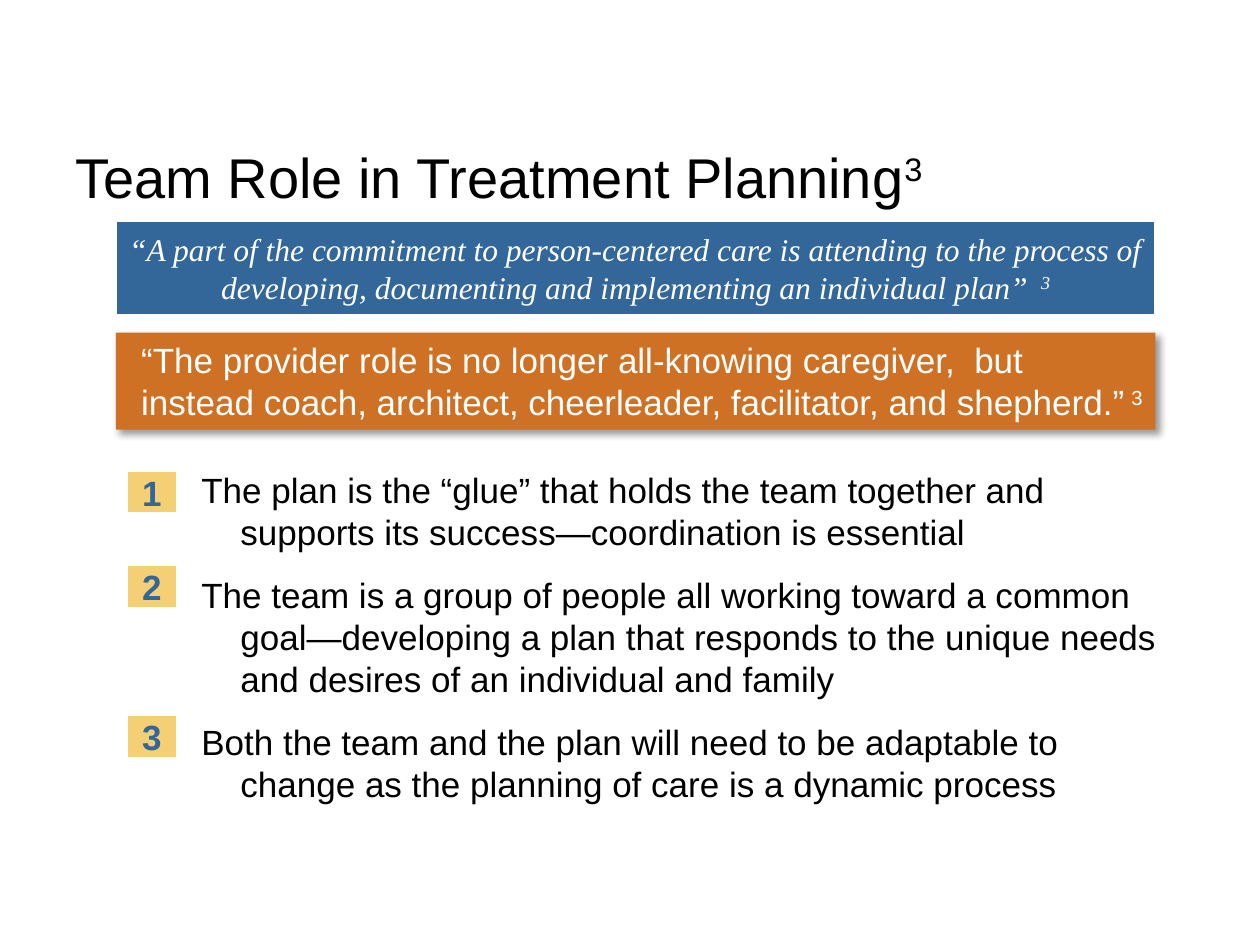
"""Build the slide on the team's role in treatment planning."""
from lxml import etree
from pptx import Presentation
from pptx.dml.color import RGBColor
from pptx.enum.shapes import MSO_SHAPE as Shape
from pptx.enum.text import MSO_ANCHOR as Anchor, MSO_AUTO_SIZE as AutoSize, PP_ALIGN as Align
from pptx.oxml import parse_xml
from pptx.oxml.ns import nsdecls, qn
from pptx.util import Inches, Pt


def rgb(value):
    return RGBColor.from_string(value)


def write(paragraph, text, size, color, face="Arial", note=""):
    paragraph.add_run().text = text
    if note:
        citation = paragraph.add_run()
        citation.text = note
        citation._r.get_or_add_rPr().set("baseline", "30000")
    font = paragraph.font
    font.size, font.name, font.color.rgb = Pt(size), face, rgb(color)
    return font


deck = Presentation()
deck.slide_width, deck.slide_height = Inches(10), Inches(7.5)
slide = deck.slides.add_slide(deck.slide_layouts[6])
shapes = slide.shapes
banner_left, banner_width = Inches(0.92), Inches(8.25)

title = shapes.add_textbox(Inches(0.5), Inches(1.08), Inches(8.75), Inches(0.92)).text_frame
title.word_wrap = True
write(title.paragraphs[0], "Team Role in Treatment Planning", 32, "000000", note="3")

commitment = shapes.add_shape(Shape.RECTANGLE, banner_left, Inches(1.75), banner_width, Inches(0.75))
commitment.shadow.inherit = False
commitment.fill.solid()
commitment.fill.fore_color.rgb = rgb("336699")
commitment.line.color.rgb = rgb("FFFFFF")
commitment.line.width = Pt(1.5)
commitment.text_frame.vertical_anchor = Anchor.MIDDLE
quote = commitment.text_frame.paragraphs[0]
quote.alignment = Align.CENTER
write(quote, "“A part of the commitment to person-centered care is attending to the process of "
      "developing, documenting and implementing an individual plan” ",
      18, "FFFFFF", "Times New Roman", " 3").italic = True

provider = shapes.add_shape(Shape.RECTANGLE, banner_left, Inches(2.64), banner_width, Inches(0.77))
provider.shadow.inherit = False
provider.fill.solid()
provider.fill.fore_color.rgb = rgb("CE7124")
provider.line.fill.background()
effects = provider._element.spPr.find(qn("a:effectLst"))
effects.append(parse_xml(
    f'<a:outerShdw {nsdecls("a")} blurRad="{Pt(4)}" dist="{Pt(3)}" dir="2700000" algn="tl" rotWithShape="0"/>'))
shade = etree.SubElement(effects[0], qn("a:srgbClr"), val="000000")
etree.SubElement(shade, qn("a:alpha"), val="40000")
role = provider.text_frame
role.auto_size = AutoSize.SHAPE_TO_FIT_TEXT
role.vertical_anchor = Anchor.TOP
role.margin_left = Inches(0.2)
role.paragraphs[0].alignment = Align.LEFT
write(role.paragraphs[0], "“The provider role is no longer all-knowing caregiver,  but instead coach, "
      "architect, cheerleader, facilitator, and shepherd.”", 20, "FFFFFF", note=" 3")

points = [
    (3.73, "The plan is the “glue” that holds the team together and supports its success—coordination is essential"),
    (4.48, "The team is a group of people all working toward a common goal—developing a plan that responds "
           "to the unique needs and desires of an individual and family"),
    (5.67, "Both the team and the plan will need to be adaptable to change as the planning of care is a dynamic process"),
]
body = shapes.add_textbox(Inches(1), Inches(3.67), Inches(8.33), Inches(2.75)).text_frame
body.word_wrap = True
for number, (top, point) in enumerate(points, 1):
    paragraph = body.paragraphs[0] if number == 1 else body.add_paragraph()
    indents = paragraph._p.get_or_add_pPr()
    indents.set("marL", str(Inches(0.81)))
    indents.set("indent", str(Inches(-0.31)))
    if number > 1:
        paragraph.space_before = Pt(12)
    write(paragraph, point, 20, "000000")

    badge = shapes.add_shape(Shape.PARALLELOGRAM, Inches(1), Inches(top), Inches(0.41), Inches(0.35))
    badge.adjustments[0] = 0
    badge.shadow.inherit = False
    badge.fill.solid()
    badge.fill.fore_color.rgb = rgb("F4CF74")
    badge.line.color.rgb = rgb("FFFFFF")
    badge.line.width = Pt(2.25)
    badge.text_frame.word_wrap = False
    badge.text_frame.vertical_anchor = Anchor.MIDDLE
    digit = badge.text_frame.paragraphs[0]
    digit.alignment = Align.CENTER
    write(digit, str(number), 20, "336699").bold = True

deck.save("out.pptx")
